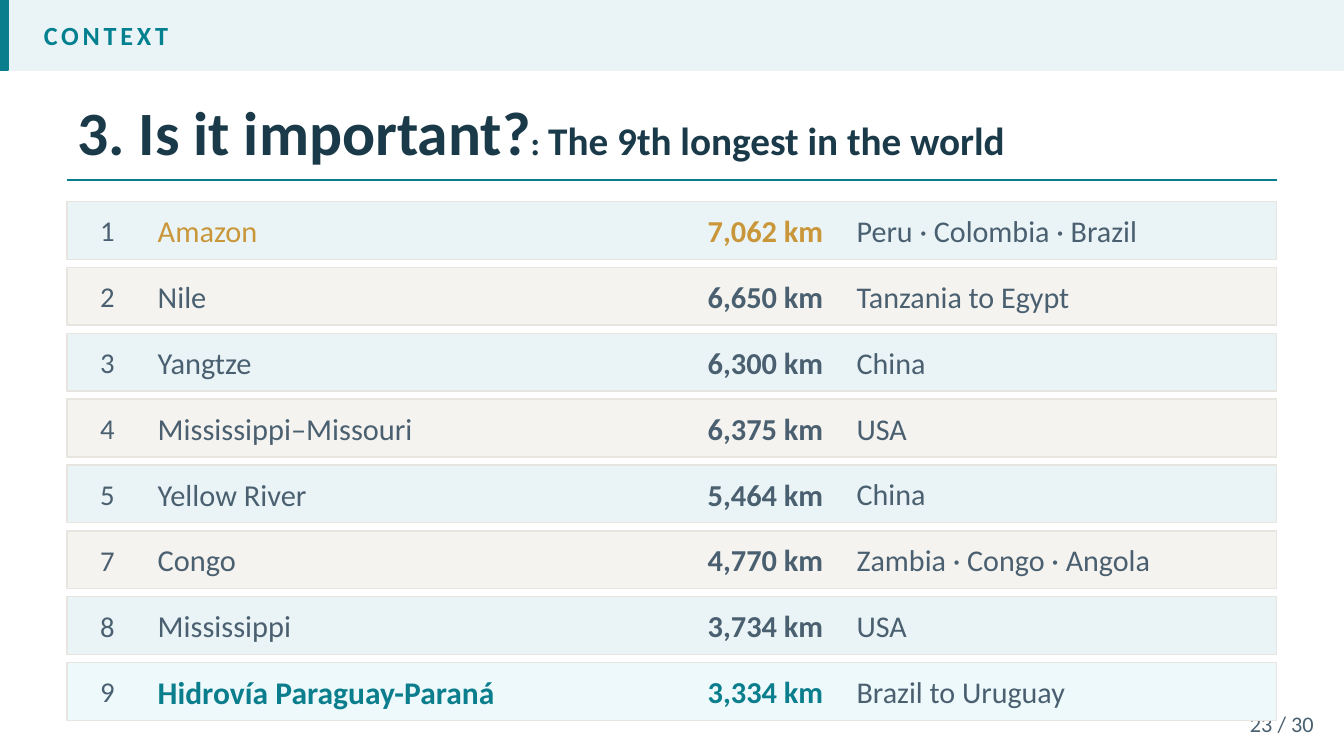
"""Build the slide ranking the longest rivers in the world."""
from pptx import Presentation
from pptx.dml.color import RGBColor
from pptx.enum.shapes import MSO_CONNECTOR, MSO_SHAPE
from pptx.enum.text import MSO_ANCHOR, MSO_AUTO_SIZE, PP_ALIGN
from pptx.oxml.ns import qn
from pptx.util import Pt
from lxml.etree import SubElement

PX = 6096
COLORS = {
    "band": "EAF4F6", "teal": "0A7E8C", "label": "028090", "navy": "1A3A4A",
    "slate": "4A6070", "gold": "C9973A", "sand": "F5F3EF", "border": "E8E4DF",
    "highlight": "EEF9FB", "white": "FFFFFF",
}


def add_bar(left, top, width, height, fill, border):
    bar = slide.shapes.add_shape(
        MSO_SHAPE.RECTANGLE, left * PX, top * PX, width * PX, height * PX)
    bar.shadow.inherit = False
    bar.fill.solid()
    bar.fill.fore_color.rgb = RGBColor.from_string(COLORS[fill])
    bar.line.color.rgb = RGBColor.from_string(COLORS[border])
    bar.line.width = Pt(1)


def write(box, left, top, width, height, runs, color, bold=False, align=PP_ALIGN.LEFT):
    box.left, box.top, box.width, box.height = (
        length * PX for length in (left, top, width, height))
    frame = box.text_frame
    frame.word_wrap = True
    frame.auto_size = MSO_AUTO_SIZE.NONE
    frame.vertical_anchor = MSO_ANCHOR.MIDDLE
    paragraph = frame.paragraphs[0]
    paragraph.alignment = align
    for text, size, face in runs:
        run = paragraph.add_run()
        run.text = text
        run.font.size = Pt(size)
        run.font.name = face
        run.font.bold = bold
        run.font.color.rgb = RGBColor.from_string(COLORS[color])
    return paragraph


deck = Presentation()
deck.slide_width, deck.slide_height = 2000 * PX, 1125 * PX
slide = deck.slides.add_slide(deck.slide_layouts[5])
slide.background.fill.solid()
slide.background.fill.fore_color.rgb = RGBColor.from_string(COLORS["white"])

add_bar(0, 0, 2000, 104, "band", "band")
add_bar(0, 0, 12, 104, "teal", "teal")
section = write(slide.shapes.add_textbox(0, 0, 0, 0), 36, 0, 1920, 104,
                [(" CONTEXT", 18.7, "Calibri")], "label", True)
section.runs[0].font._element.set("spc", "270")

write(slide.shapes.title, 100, 125, 1962, 140, [
    ("3. Is it important?", 44, "Calibri"),
    (": ", 24, "TeX Gyre Pagella"),
    ("The 9th longest in the world", 28, "Calibri"),
], "navy", True)

title_rule = slide.shapes.add_connector(
    MSO_CONNECTOR.STRAIGHT, 100 * PX, 268 * PX, 1900 * PX, 268 * PX)
title_rule.line.color.rgb = RGBColor.from_string(COLORS["teal"])
title_rule.line.width = Pt(1.5)
SubElement(title_rule._element.spPr, qn("a:effectLst"))

write(slide.shapes.add_textbox(0, 0, 0, 0), 1800, 1050, 170, 55,
      [("23 / 30", 15.9, "Calibri")], "slate", align=PP_ALIGN.RIGHT)

rivers = [
    ("1", "Amazon", "7,062 km", "Peru · Colombia · Brazil"),
    ("2", "Nile", "6,650 km", "Tanzania to Egypt"),
    ("3", "Yangtze", "6,300 km", "China"),
    ("4", "Mississippi–Missouri", "6,375 km", "USA"),
    ("5", "Yellow River", "5,464 km", "China"),
    ("7", "Congo", "4,770 km", "Zambia · Congo · Angola"),
    ("8", "Mississippi", "3,734 km", "USA"),
    ("9", "Hidrovía Paraguay-Paraná", "3,334 km", "Brazil to Uruguay"),
]
accents = {"1": "gold", "9": "teal"}

for index, (rank, river, distance, countries) in enumerate(rivers):
    top = 300 + index * 98
    featured = rank == "9"
    accent = accents.get(rank, "slate")
    fill = "highlight" if featured else ("band", "sand")[index % 2]
    add_bar(100, top, 1800, 86, fill, "border")
    cells = [
        (110, 100, rank, 20.5, "slate", False, PP_ALIGN.CENTER),
        (220, 720, river, 22.5 if featured else 21.7, accent, featured, PP_ALIGN.LEFT),
        (960, 280, distance, 21.7, accent, True, PP_ALIGN.RIGHT),
        (1260, 610, countries, 21.5, "slate", False, PP_ALIGN.LEFT),
    ]
    for left, width, text, size, color, bold, align in cells:
        write(slide.shapes.add_textbox(0, 0, 0, 0), left, top + 10, width, 66,
              [(text, size, "Calibri")], color, bold, align)

deck.save("out.pptx")
